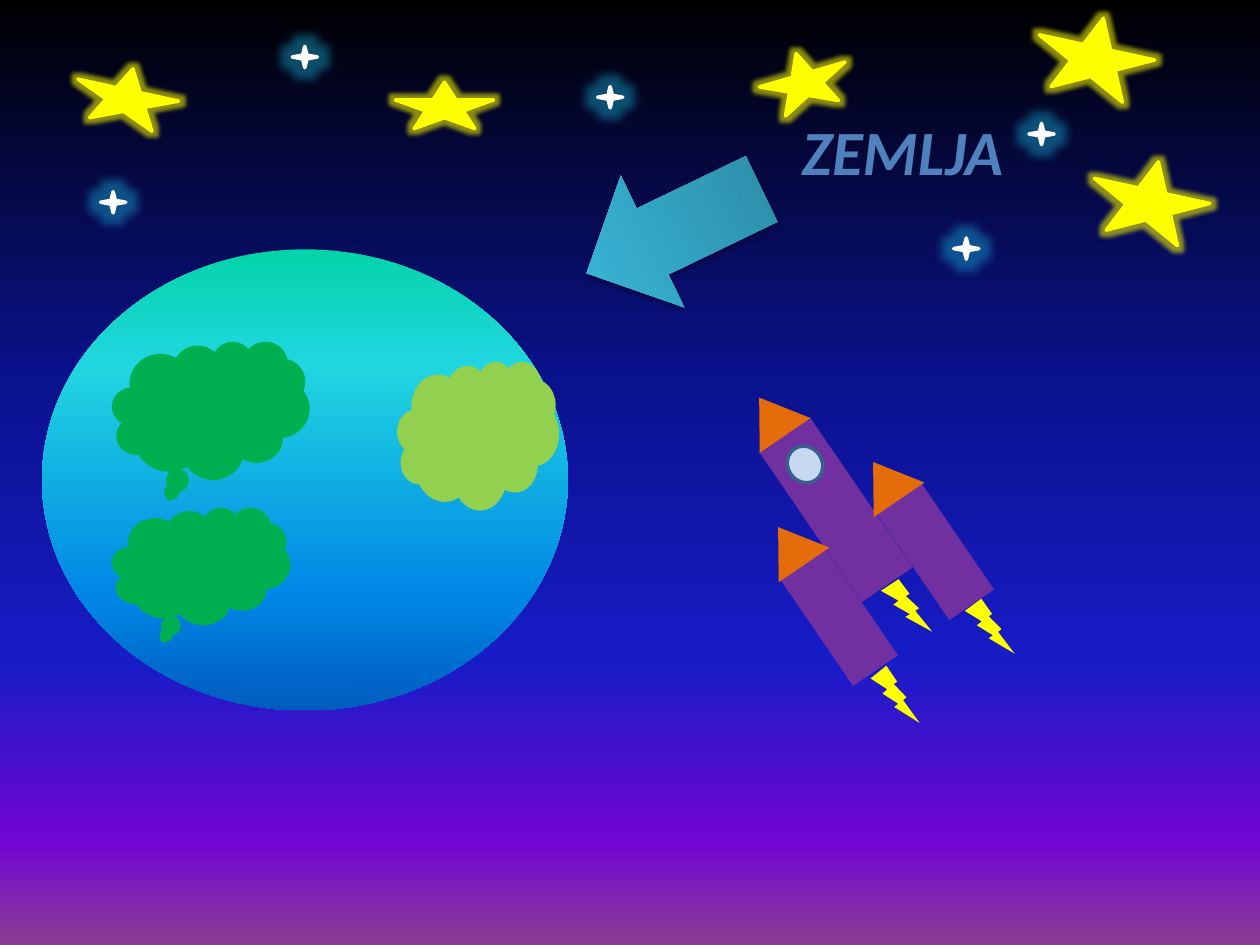
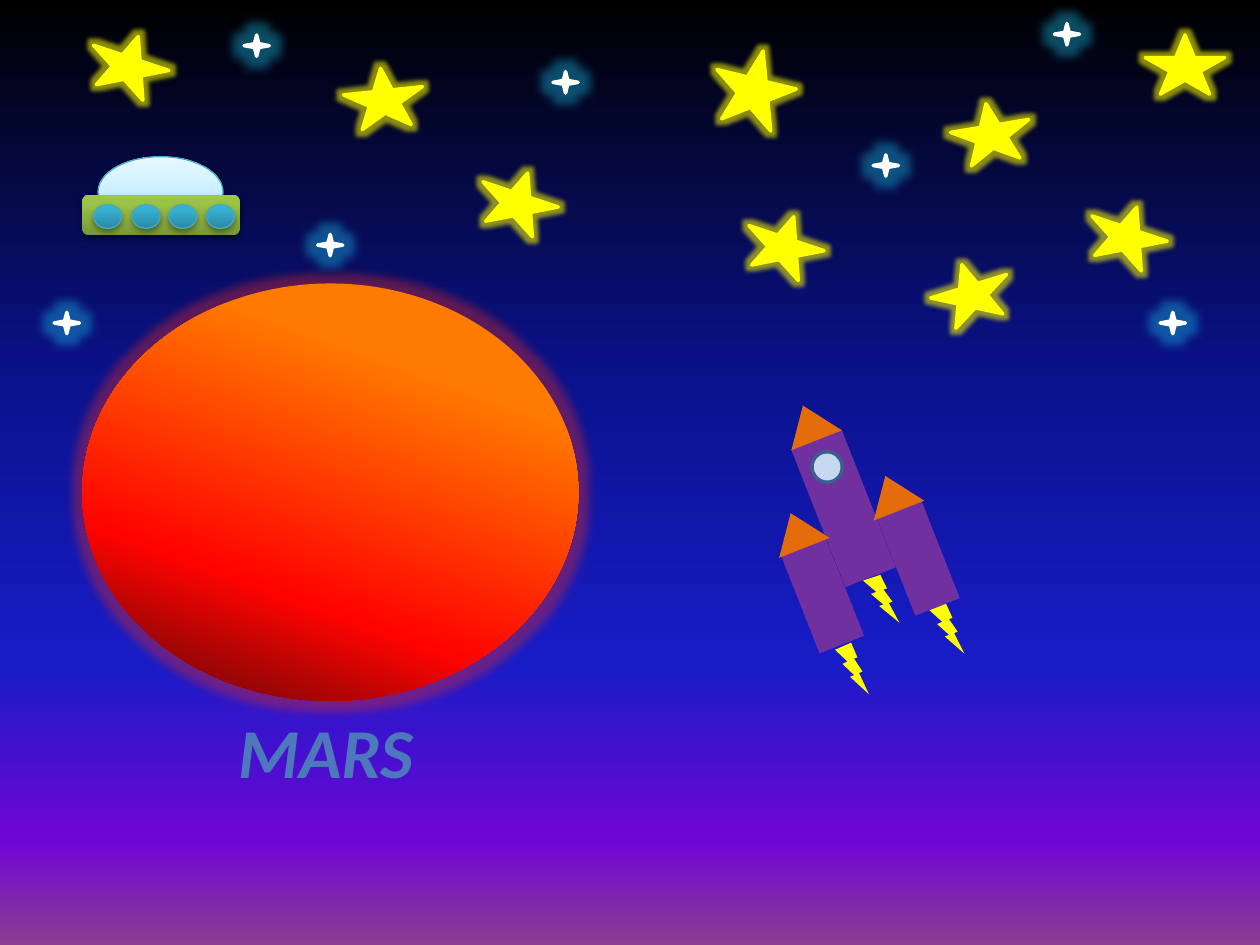
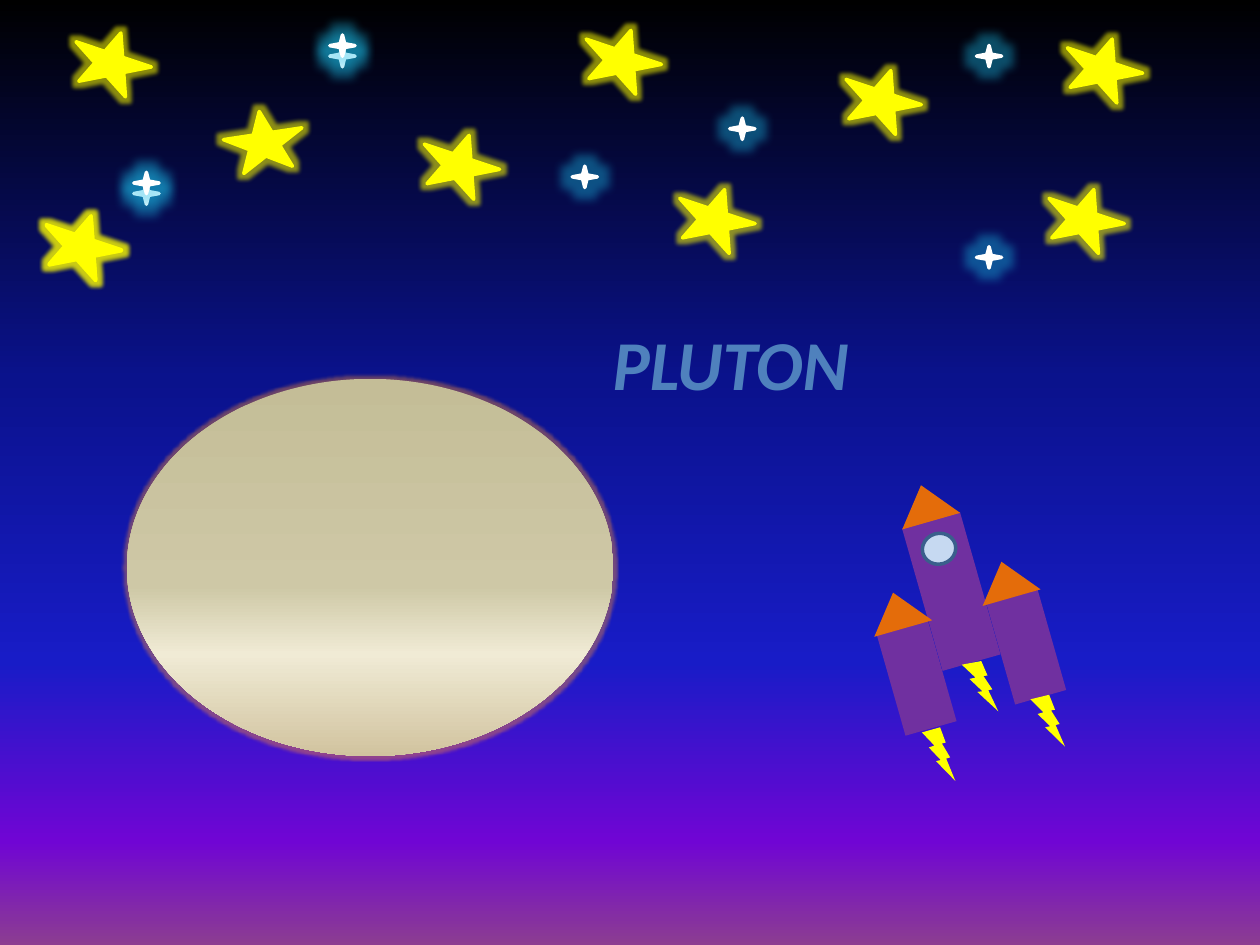
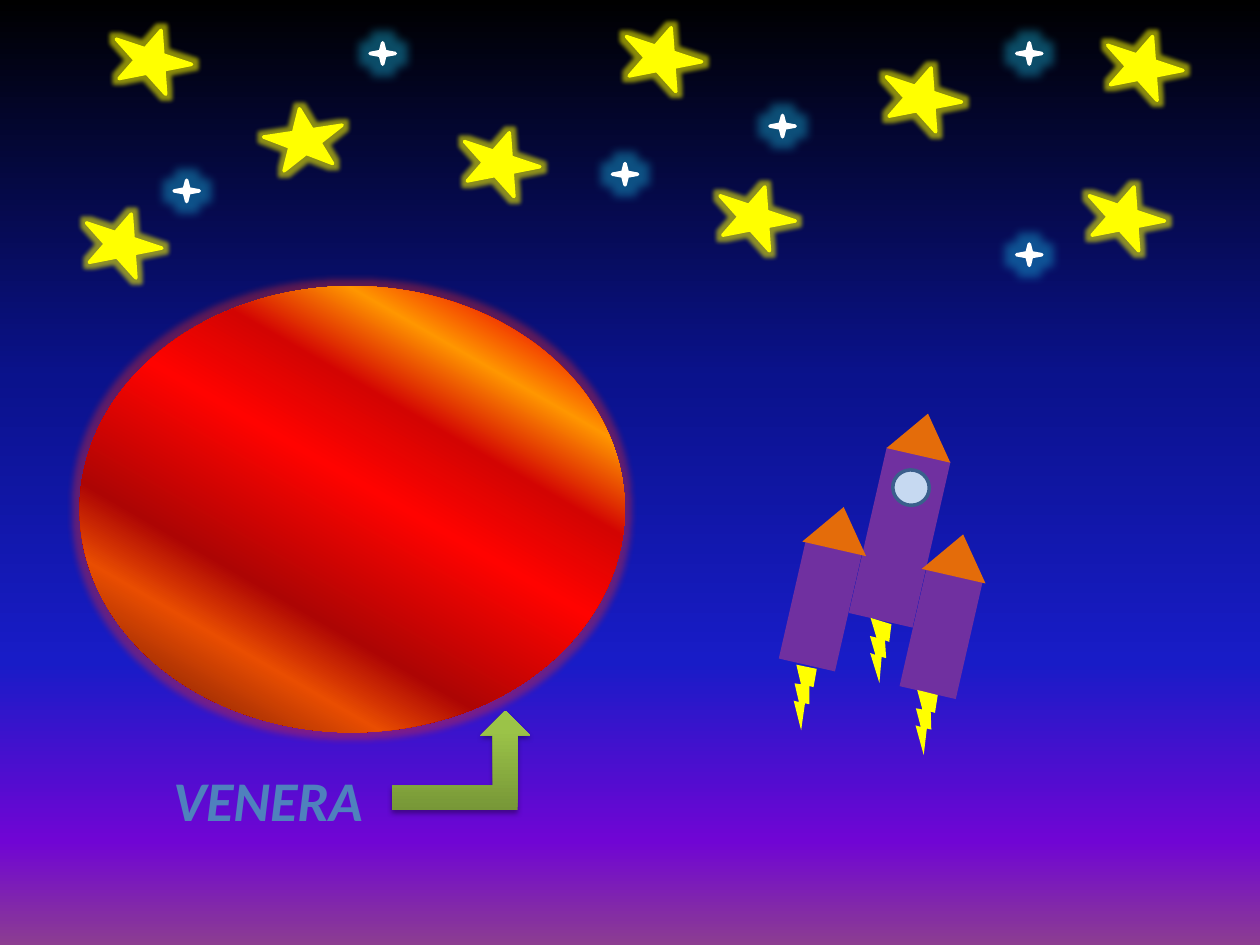
"""Build four slides of a rocket trip past Earth, Mars, Pluto and Venus."""
import math

import pptx
import pptx.dml.color
import pptx.enum.shapes
import pptx.enum.text
import pptx.oxml.ns
import pptx.util
from lxml import etree

Pt = pptx.util.Pt
KIND = pptx.enum.shapes.MSO_SHAPE
RGB = pptx.dml.color.RGBColor.from_string
tag = pptx.oxml.ns.qn


class Theme:
    font = "Calibri"
    small, mid, large = 32, 36, 40
    ink = "4F81BD"
    sheen = ([(0, "7494C9"), (49, "4D79BC"), (50, "346AAA"), (92, "325F94"), (100, "315D91")], 90)
    night = ([(0, "000000"), (40, "0A128C"), (70, "181CC7"), (89, "7005D4"), (100, "8C3D91")], 90)
    earth = ([(0, "03D4A8"), (25, "21D6E0"), (75, "0087E6"), (100, "005CBF")], 90)
    mars = ([(24, "FF7A00"), (70, "FF0300"), (100, "4D0808")], 110)
    pluto = ([(0, "C4BD97"), (55, "CEC8A6"), (73, "F0EBD5"), (100, "D1C39F")], 90)
    venus = ([(0, "FFF200"), (9, "EA0301"), (21, "FF9600"), (33, "D30402"),
              (46, "FF0300"), (67, "AD0504"), (77, "E94D01"), (100, "4D0808")], 120)
    teal = ([(0, "2A88A2"), (80, "37B1D2"), (100, "34B4D6")], 270)
    moss = ([(0, "779737"), (80, "9BC348"), (100, "9DC746")], 270)
    glass = ([(0, "A7E6FF"), (35, "C1EDFF"), (100, "E7F8FF")], 270)
    land, lime = "00B050", "92D050"
    hull, nose, pane, flame = "7030A0", "E46C0A", "C6D9F1", "FFFF00"
    white = "FFFFFF"
    rim, edge = ("3A5F8C", 2), ("46AAC5", 0.75)
    shade = ("a:outerShdw", {"blurRad": Pt(3.1), "dist": Pt(1.8), "dir": 5400000}, "000000", 35)
    shine = ("a:glow", {"rad": Pt(5)}, "FFFF00", 55)
    spark = ("a:glow", {"rad": Pt(11)}, "1CC0EA", 40)
    heat = ("a:glow", {"rad": Pt(11)}, "E02A28", 40)
    warm = ("a:glow", {"rad": Pt(8)}, "E02A28", 40)
    haze = ("a:glow", {"rad": Pt(3)}, "FF8F30", 40)


def blend(host, stops, angle):
    """Swap the solid fill in host for a linear gradient."""
    grad = etree.Element(tag("a:gradFill"), rotWithShape="1")
    row = etree.SubElement(grad, tag("a:gsLst"))
    for spot, shade in stops:
        stop = etree.SubElement(row, tag("a:gs"), pos=str(spot * 1000))
        etree.SubElement(stop, tag("a:srgbClr"), val=shade)
    etree.SubElement(grad, tag("a:lin"), ang=str(angle * 60000), scaled="0")
    host.replace(host.find(tag("a:solidFill")), grad)


def put(shapes, kind, box, fill, line=None, turn=0, glow=None):
    """Add one filled shape, with its line, turn and glow or shadow."""
    shape = shapes.add_shape(kind, *[Pt(side) for side in box])
    shape.rotation = turn
    shape.fill.solid()
    if isinstance(fill, str):
        shape.fill.fore_color.rgb = RGB(fill)
    else:
        blend(shape._element.spPr, *fill)
    if line:
        shape.line.color.rgb = RGB(line[0])
        shape.line.width = Pt(line[1])
    else:
        shape.line.fill.background()
    shape.shadow.inherit = False
    if glow:
        name, traits, shade, alpha = glow
        host = shape._element.spPr.find(tag("a:effectLst"))
        mark = etree.SubElement(host, tag(name), {key: str(val) for key, val in traits.items()})
        tint = etree.SubElement(mark, tag("a:srgbClr"), val=shade)
        etree.SubElement(tint, tag("a:alpha"), val=str(alpha * 1000))
    return shape


rocket = [
    (KIND.RECTANGLE, -35.4, 48.7, 33, 68.4, Theme.hull, None, 0),
    (KIND.RECTANGLE, 0, 0, 37.4, 97.2, Theme.hull, None, 0),
    (KIND.RECTANGLE, 35.4, 48.7, 33, 68.4, Theme.hull, None, 0),
    (KIND.ISOSCELES_TRIANGLE, -35, 2.5, 37.4, 24.5, Theme.nose, None, 0),
    (KIND.ISOSCELES_TRIANGLE, 35, 2.5, 37.4, 24.5, Theme.nose, None, 0),
    (KIND.ISOSCELES_TRIANGLE, 0, -60.3, 37.4, 24.5, Theme.nose, None, 0),
    (KIND.OVAL, 0, -29.2, 20.9, 20.2, Theme.pane, Theme.rim, 0),
    (KIND.LIGHTNING_BOLT, -34.4, 99.5, 26.6, 32.4, Theme.flame, None, 27.9),
    (KIND.LIGHTNING_BOLT, 2, 63.8, 28.8, 29.5, Theme.flame, None, 29.3),
    (KIND.LIGHTNING_BOLT, 36.5, 98, 27.4, 31, Theme.flame, None, 28.5),
]

stars = [(151, 62, -8.6), (504, 38, 18.5), (355.5, 15, 18.5), (630.5, 20, 18.5), (47, 121.5, 18.5),
         (620, 106, 18.5), (263, 75, 18.5), (64, 16.5, 18.5), (409, 106, 18.5)]
sparks = [(440, 66), (99.5, 103), (581, 24.5), (211.5, 24.5), (581, 139.5), (350, 93.5)]
left, down = 23, 1.5

scenes = [
    {
        "name": "ZEMLJA", "box": (439, 60.5, 153.5, 51), "size": Theme.mid, "ink": Theme.ink,
        "ship": (477.7, 291.2, 0.94, 1.07, -34.4), "flip": False,
        "parts": [
            (KIND.OVAL, (24, 142.5, 300.5, 263.5), Theme.earth),
            (KIND.CLOUD_CALLOUT, (64, 195, 113, 79), Theme.land),
            (KIND.CLOUD, (228, 207.5, 90.5, 83), Theme.lime, (Theme.lime, 2)),
            (KIND.CLOUD_CALLOUT, (64, 290, 102, 67), Theme.land),
            (KIND.UP_ARROW, (343.5, 76.5, 83.5, 111), Theme.teal, None, 244.3, Theme.shade),
        ],
        "stars": [(434, 30, -16.2, 51, 32.5), (226, 47, 0, 56, 26.5), (43, 39, 12.3, 59, 32.5),
                  (623.5, 92, 12.3, 67.5, 44.5), (592, 10, 12.3, 67.5, 44.5)],
        "sparks": [(167, 26.5), (588, 70.5), (57.5, 109.5), (341.5, 49.5), (545, 136)],
    },
    {
        "name": "MARS", "box": (91, 401, 190, 55.5), "size": Theme.large, "ink": Theme.sheen,
        "ship": (482, 290.5, 0.83, 0.87, -21.5), "flip": True,
        "parts": [
            (KIND.OVAL, (47, 162, 283.5, 238.5), Theme.mars, None, 0, Theme.heat),
            (KIND.OVAL, (56, 89.5, 71.5, 40.5), Theme.glass, Theme.edge, 0, Theme.shade),
            (KIND.FLOWCHART_ALTERNATE_PROCESS, (47, 111.5, 90, 23), Theme.moss, None, 0, Theme.shade),
            *[(KIND.OVAL, (x, 117, 16, 13.5), Theme.teal, Theme.edge, 0, Theme.shade)
              for x in (53.5, 75.5, 96.5, 118)],
        ],
        "stars": [(543.5, 59, -9.4), (406, 29, -58.6, 45.4, 44.6), (621.5, 117.5, 18.5),
                  (654.5, 20, 0), (196.5, 39, -6), (273.5, 98, 18.5), (51, 20, 18.5),
                  (425.5, 123, 18.5), (532, 150.5, -17.2)],
        "sparks": [(499, 88.5), (139.5, 20), (602.5, 13.5), (31, 178.5), (181.5, 134),
                   (316, 41), (663, 178.5)],
    },
    {
        "name": "PLUTON", "box": (309, 179.5, 217, 55.5), "size": Theme.large, "ink": Theme.ink,
        "ship": (543.6, 338, 0.92, 0.87, -15.9), "flip": True,
        "parts": [(KIND.OVAL, (72.5, 216.5, 278, 215.5), Theme.pluto, None, 0, Theme.haze)],
        "stars": [(x - left, y + down, turn) for x, y, turn in stars] + [(24, 122.5, 18.5)],
        "sparks": [(x - left, y + down) for x, y in sparks] + [(76.5, 98.5), (188.5, 20)],
    },
    {
        "name": "VENERA", "box": (48.5, 434, 209.5, 46), "size": Theme.small, "ink": Theme.ink,
        "ship": (514.1, 307.1, 1, 1, 12.9), "flip": True,
        "parts": [
            (KIND.OVAL, (45.5, 163.5, 311.5, 255), Theme.venus, None, 0, Theme.warm),
            (KIND.BENT_UP_ARROW, (224, 406, 79, 57), Theme.moss, None, 0, Theme.shade),
        ],
        "stars": stars,
        "sparks": sparks,
    },
]

deck = pptx.Presentation()
deck.slide_width, deck.slide_height = Pt(720), Pt(540)
deck.slide_master.background.fill.solid()
blend(deck.slide_master._element.xpath("p:cSld/p:bg/p:bgPr")[0], *Theme.night)

for scene in scenes:
    slide = deck.slides.add_slide(deck.slide_layouts[5])

    title = slide.shapes.title
    title.left, title.top, title.width, title.height = [Pt(side) for side in scene["box"]]
    frame = title.text_frame
    frame.word_wrap = True
    frame.auto_size = pptx.enum.text.MSO_AUTO_SIZE.SHAPE_TO_FIT_TEXT
    frame.vertical_anchor = pptx.enum.text.MSO_ANCHOR.TOP
    line = frame.paragraphs[0]
    line.alignment = pptx.enum.text.PP_ALIGN.CENTER
    run = line.add_run()
    run.text = scene["name"]
    run.font.name = Theme.font
    run.font.size = Pt(scene["size"])
    run.font.bold = run.font.italic = True
    run.font.fill.solid()
    if isinstance(scene["ink"], str):
        run.font.color.rgb = RGB(scene["ink"])
    else:
        blend(run._r.get_or_add_rPr(), *scene["ink"])

    for part in scene["parts"]:
        put(slide.shapes, *part)

    mid_x, mid_y, wide, high, tilt = scene["ship"]
    cos, sin = math.cos(math.radians(tilt)), math.sin(math.radians(tilt))
    group = slide.shapes.add_group_shape()
    for kind, x, y, w, h, fill, rim, turn in rocket:
        x, y, w, h = x * wide, y * high, w * wide, h * high
        box = (mid_x + x * cos - y * sin - w / 2, mid_y + x * sin + y * cos - h / 2, w, h)
        put(group.shapes, kind, box, fill, rim, tilt + turn)

    for x, y, turn, *size in scene["stars"]:
        star = put(slide.shapes, KIND.STAR_5_POINT, (x, y, *(size or (45.4, 33.8))),
                   Theme.flame, (Theme.flame, 2), turn, Theme.shine)
        if scene["flip"]:
            star._element.spPr.xfrm.set("flipH", "1")

    for x, y in scene["sparks"]:
        put(slide.shapes, KIND.STAR_4_POINT, (x, y, 14.4, 12.2),
            Theme.white, (Theme.white, 2), 0, Theme.spark)

deck.save("out.pptx")
